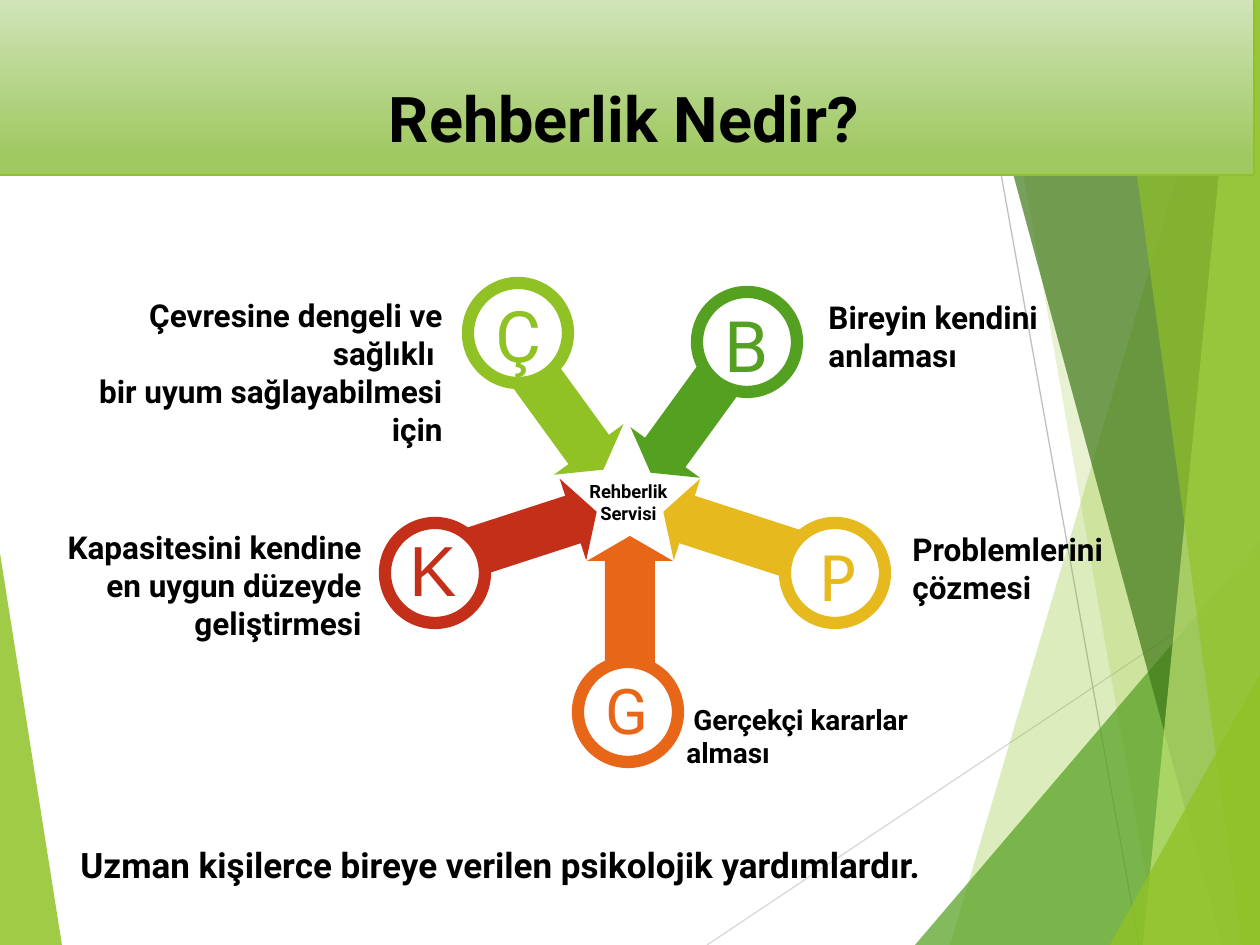
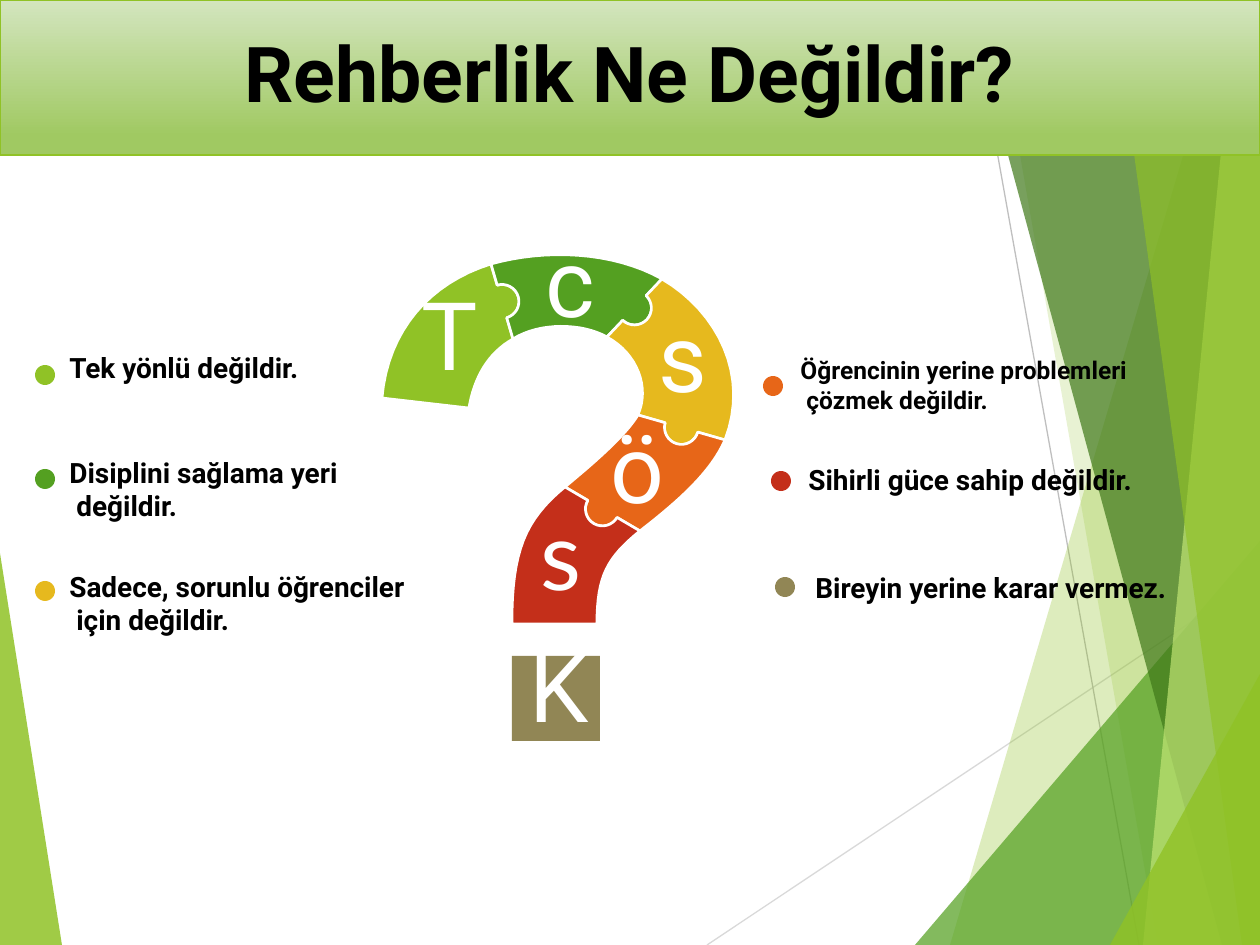
import math

import lxml.etree
import pptx
import pptx.dml.color
import pptx.enum.shapes
import pptx.enum.text
import pptx.oxml.ns
import pptx.util

RGB = pptx.dml.color.RGBColor
ALIGN = pptx.enum.text.PP_ALIGN
ANCHOR = pptx.enum.text.MSO_ANCHOR
SHAPE = pptx.enum.shapes.MSO_SHAPE

PX = 914400 / 126  # EMU per px
SLIDE_W, SLIDE_H = 1260, 945
FONT = "Roboto"

# Colours
BLACK = RGB(0x00, 0x00, 0x00)
WHITE = RGB(0xFF, 0xFF, 0xFF)
LIME = RGB(0x90, 0xC2, 0x26)
GREEN = RGB(0x54, 0xA0, 0x21)
FOREST = RGB(0x3F, 0x78, 0x19)
PALE_LIME = RGB(0xC0, 0xE4, 0x74)
YELLOW = RGB(0xE6, 0xB9, 0x1E)
ORANGE = RGB(0xE7, 0x66, 0x18)
RED = RGB(0xC4, 0x2F, 0x1A)
KHAKI = RGB(0x91, 0x86, 0x55)
BAND_TOP = RGB(0xD3, 0xE5, 0xBE)
BAND_BOTTOM = RGB(0xA0, 0xC9, 0x62)
RAY_LIGHT = RGB(0xD9, 0xD9, 0xD9)
RAY_DARK = RGB(0xBF, 0xBF, 0xBF)

# Backdrop: thin rays, and facets that run from an apex and a foot to the right edge
LEFT_FACET = [(0, 553), (62, SLIDE_H), (0, SLIDE_H)]
RAYS = [((707, SLIDE_H), (SLIDE_W, 576), RAY_LIGHT), ((970, 0), (1139, SLIDE_H), RAY_DARK)]
# colour, opacity %, apex, x of the foot
RIGHT_FACETS = [
    (LIME, 30, (1229, 0), 950),
    (LIME, 20, (993, 0), 1158),
    (GREEN, 72, (SLIDE_W, 541), 915),
    (FOREST, 70, (966, 0), 1222),
    (PALE_LIME, 70, (1236, 0), 1143),
    (LIME, 65, (1113, 0), 1242),
    (LIME, 80, (SLIDE_W, 674), 1110),
]

# Slide 1: five arrows, equal turns apart, point at a hub
HUB, RING = (630, 501), 100
ARROW_HALF = [(35, 0), (60, 43), (60, 25), (200, 25)]  # along, across
# letter, colour, font, size, ring centre, letter centre
SPOKES = [
    ("G", ORANGE, FONT, 36, (628, 712), (627, 709)),
    ("K", RED, "Arial", 40.5, (435, 573), (433, 568)),
    ("Ç", LIME, FONT, 40.5, (518, 333), (519, 334)),
    ("B", GREEN, FONT, 40.5, (747, 342), (747, 344)),
    ("P", YELLOW, "Calibri", 40.5, (835, 573), (838, 573)),
]
ARROW_NUDGES = {"Ç": (-6, -3)}
# lines, left, top, width, size, alignment
SPOKE_TEXTS = [
    (["Rehberlik", "Servisi"], 573, 474, 111, 10.5, ALIGN.CENTER),
    (["Bireyin kendini anlaması"], 816, 292, 347, 18, ALIGN.LEFT),
    (["Problemlerini çözmesi"], 900, 524, 240, 18, ALIGN.LEFT),
    ([" Gerçekçi kararlar alması"], 674, 696, 311, 16, ALIGN.LEFT),
    (["Kapasitesini kendine en uygun düzeyde geliştirmesi"], 30, 522, 344, 18, ALIGN.RIGHT),
    (["Çevresine dengeli ve sağlıklı ", "bir uyum sağlayabilmesi için"],
     49, 290, 406, 18, ALIGN.RIGHT),
    (["Uzman kişilerce bireye verilen psikolojik yardımlardır."],
     68, 837, 951, 20, ALIGN.LEFT),
]

# Slide 2: a puzzle question mark, cut across its stroke; each inner cut has a knob
KNOB = 17
CUTS = [  # outer end, inner end
    ((382, 398), (469, 408)), ((491, 264), (513, 339)), ((662, 279), (607, 337)),
    ((725, 440), (638, 415)), ((640, 531), (565, 487)), ((597, 624), (512, 624)),
]
# colour, Bézier handles of the outer side, handles of the inner side
PIECES = [
    (LIME, [(388, 330), (430, 283)], [(474, 378), (488, 353)]),
    (GREEN, [(545, 249), (612, 251)], [(540, 322), (582, 323)]),
    (YELLOW, [(718, 312), (750, 376)], [(638, 354), (650, 388)]),
    (ORANGE, [(711, 472), (680, 500)], [(625, 437), (589, 467)]),
    (RED, [(607, 558), (597, 576)], [(525, 520), (512, 551)]),
]
MARK_DOT = (512, 656, 88, 85)
PIECE_LETTERS = [
    ("T", FONT, (446, 333)), ("c", FONT, (570, 280)), ("s", FONT, (683, 355)),
    ("ö", FONT, (635, 466)), ("s", "Lato", (561, 553)), ("K", FONT, (554, 685)),
]
# colour, dot left and top, lines, text left, top, width, size
DOT = 20
MYTHS = [
    (LIME, 35, 365, ["Tek yönlü değildir."], 57, 344, 276, 16),
    (GREEN, 35, 469, ["Disiplini sağlama yeri", " değildir."], 57, 449, 311, 16),
    (YELLOW, 35, 581, ["Sadece, sorunlu öğrenciler", " için değildir."], 57, 563, 382, 16),
    (ORANGE, 763, 376, ["Öğrencinin yerine problemleri", " çözmek değildir."],
     788, 349, 379, 14),
    (RED, 771, 471, ["Sihirli güce sahip değildir."], 796, 456, 370, 16),
    (KHAKI, 775, 577, ["Bireyin yerine karar vermez."], 803, 564, 404, 16),
]


def emu(*lengths):
    return [round(length * PX) for length in lengths]


# Drawing helpers
def paint(shape, colour, opacity=100):
    shape.shadow.inherit = False
    shape.fill.solid()
    shape.fill.fore_color.rgb = colour
    shape.line.fill.background()
    if opacity < 100:
        srgb = shape.element.spPr.find(".//" + pptx.oxml.ns.qn("a:srgbClr"))
        lxml.etree.SubElement(srgb, pptx.oxml.ns.qn("a:alpha"), val=str(opacity * 1000))
    return shape


def set_line(shape, colour, points):
    shape.line.color.rgb = colour
    shape.line.width = pptx.util.Pt(points)


def add_outline(slide, outline, colour, opacity=100):
    points = [emu(*point) for point in outline]
    builder = slide.shapes.build_freeform(*points[0], scale=1.0)
    builder.add_line_segments(points[1:], close=True)
    return paint(builder.convert_to_shape(), colour, opacity)


def add_ray(slide, start, end, colour):
    ray = slide.shapes.add_connector(
        pptx.enum.shapes.MSO_CONNECTOR.STRAIGHT, *emu(*start, *end))
    set_line(ray, colour, 0.75)
    lxml.etree.SubElement(ray.element.spPr, pptx.oxml.ns.qn("a:effectLst"))
    return ray


def add_circle(slide, left, top, size, colour):
    return paint(slide.shapes.add_shape(SHAPE.OVAL, *emu(left, top, size, size)), colour)


def style(paragraph, size, colour=BLACK, font=FONT, bold=True, align=ALIGN.LEFT):
    paragraph.alignment = align
    paragraph.font.name = font
    paragraph.font.size = pptx.util.Pt(size)
    paragraph.font.bold = bold
    paragraph.font.color.rgb = colour


def add_text(slide, lines, left, top, width, size, align=ALIGN.LEFT):
    height = 13 + len(lines) * size * 2.1
    frame = slide.shapes.add_textbox(*emu(left, top, width, height)).text_frame
    frame.word_wrap = True
    frame.text = "\n".join(lines)
    for paragraph in frame.paragraphs:
        style(paragraph, size, align=align)


def add_letter(slide, letter, centre, size, colour, font, box=48):
    left, top = centre[0] - box // 2, centre[1] - box // 2
    frame = slide.shapes.add_textbox(*emu(left, top, box, box)).text_frame
    frame.margin_left = frame.margin_right = frame.margin_top = frame.margin_bottom = 0
    frame.word_wrap = False
    frame.vertical_anchor = ANCHOR.MIDDLE
    frame.text = letter
    style(frame.paragraphs[0], size, colour, font, False, ALIGN.CENTER)


# Outlines by rule
def arrow_outline(turn, nudge):
    sin, cos = math.sin(math.radians(turn)), math.cos(math.radians(turn))
    mirrored = [(along, -across) for along, across in reversed(ARROW_HALF[1:])]
    return [(HUB[0] + nudge[0] - along * sin + across * cos,
             HUB[1] + nudge[1] + along * cos + across * sin)
            for along, across in ARROW_HALF + mirrored]


def bezier(start, handles, end, steps=16):
    curve = [start, *handles, end]
    points = []
    for i in range(steps + 1):
        t = i / steps
        weights = [math.comb(3, k) * t**k * (1 - t)**(3 - k) for k in range(4)]
        points.append([sum(w * p[axis] for w, p in zip(weights, curve)) for axis in (0, 1)])
    return points


def cut_line(index, steps=16):
    """Points from the outer to the inner end, with a half-round knob midway."""
    outer, inner = CUTS[index]
    if index in (0, len(CUTS) - 1):
        return [outer, inner]
    length = math.dist(outer, inner)
    dx, dy = (inner[0] - outer[0]) / length, (inner[1] - outer[1]) / length
    x, y = (outer[0] + inner[0]) / 2, (outer[1] + inner[1]) / 2
    knob = []
    for i in range(steps + 1):
        angle = math.pi * i / steps
        along, out = -KNOB * math.cos(angle), KNOB * math.sin(angle)
        knob.append((x + along * dx + out * dy, y + along * dy - out * dx))
    return [outer, *knob, inner]


def piece_outline(index, outer_handles, inner_handles):
    (outer_a, inner_a), (outer_b, inner_b) = CUTS[index:index + 2]
    return (bezier(outer_a, outer_handles, outer_b) + cut_line(index + 1)
            + bezier(inner_a, inner_handles, inner_b)[::-1] + cut_line(index)[::-1])


# Shared parts
def move_backdrop_to_layout(slide):
    parts = [add_outline(slide, LEFT_FACET, LIME, 85)]
    parts += [add_ray(slide, *ray) for ray in RAYS]
    for colour, opacity, apex, foot in RIGHT_FACETS:
        corners = [apex, (foot, SLIDE_H), (SLIDE_W, SLIDE_H), (SLIDE_W, apex[1])]
        parts.append(add_outline(slide, corners, colour, opacity))
    for number, part in enumerate(parts, start=100):
        part.element.xpath(".//p:cNvPr")[0].set("id", str(number))
        slide.slide_layout.shapes.element.append(part.element)


def set_title(slide, text, box, size, top_margin=6, spacing=1.0):
    title = slide.shapes.title
    title.left, title.top, title.width, title.height = emu(*box)
    title.fill.gradient()
    title.fill.gradient_angle = 270
    for stop, colour, position in zip(title.fill.gradient_stops,
                                      (BAND_TOP, BAND_BOTTOM), (0, 0.88)):
        stop.color.rgb = colour
        stop.position = position
    set_line(title, LIME, 1)
    frame = title.text_frame
    frame.auto_size = pptx.enum.text.MSO_AUTO_SIZE.NONE
    frame.vertical_anchor = ANCHOR.MIDDLE
    frame.margin_top = emu(top_margin)[0]
    frame.text = text
    frame.paragraphs[0].line_spacing = spacing
    style(frame.paragraphs[0], size, align=ALIGN.CENTER)


# Slides
def build_what_it_is(slide):
    set_title(slide, "Rehberlik Nedir?", (-6, -8, SLIDE_W, 183), 36, top_margin=73)
    for i, (letter, colour, *_) in enumerate(SPOKES):
        nudge = ARROW_NUDGES.get(letter, (0, 0))
        add_outline(slide, arrow_outline(i * 360 / len(SPOKES), nudge), colour)
    for text in SPOKE_TEXTS:
        add_text(slide, *text)
    for letter, colour, font, size, (x, y), letter_centre in SPOKES:
        ring = add_circle(slide, x - RING // 2, y - RING // 2, RING, WHITE)
        set_line(ring, colour, 7)
        add_letter(slide, letter, letter_centre, size, colour, font)


def build_what_it_is_not(slide):
    set_title(slide, "Rehberlik Ne Değildir?", (0, 0, SLIDE_W, 155), 44, spacing=0.9)
    for i, (colour, *handles) in enumerate(PIECES):
        piece = add_outline(slide, piece_outline(i, *handles), colour)
        set_line(piece, WHITE, 1.5)
    paint(slide.shapes.add_shape(SHAPE.RECTANGLE, *emu(*MARK_DOT)), KHAKI)
    for colour, dot_left, dot_top, *text in MYTHS:
        add_circle(slide, dot_left, dot_top, DOT, colour)
        add_text(slide, *text)
    for letter, font, centre in PIECE_LETTERS:
        add_letter(slide, letter, centre, 54, WHITE, font)


def main():
    deck = pptx.Presentation()
    deck.slide_width, deck.slide_height = emu(SLIDE_W, SLIDE_H)
    title_only = deck.slide_layouts[5]
    what_it_is = deck.slides.add_slide(title_only)
    move_backdrop_to_layout(what_it_is)
    build_what_it_is(what_it_is)
    build_what_it_is_not(deck.slides.add_slide(title_only))
    deck.save("out.pptx")


if __name__ == "__main__":
    main()
